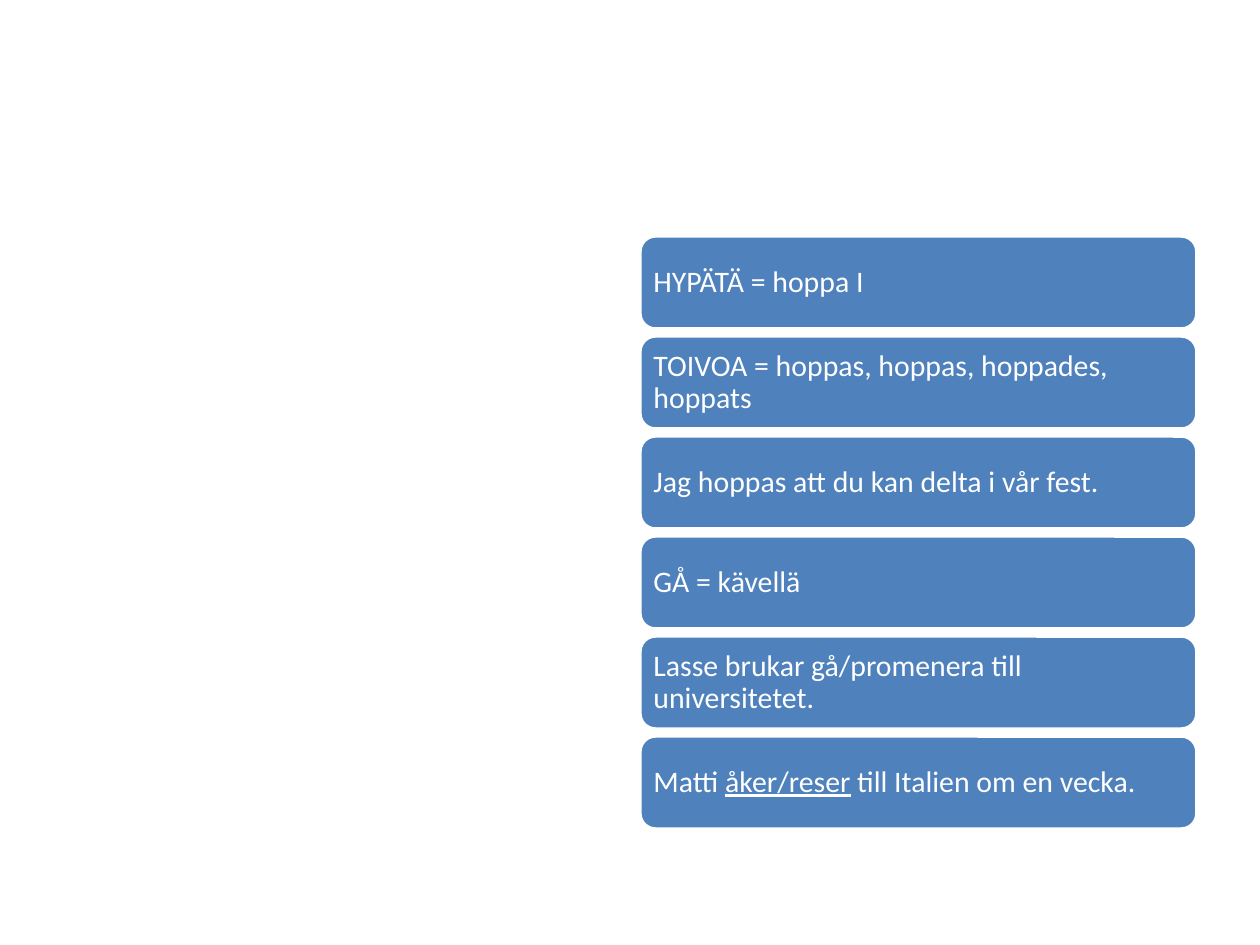
from pptx import Presentation
from pptx.dml.color import RGBColor
from pptx.enum.shapes import MSO_SHAPE
from pptx.enum.text import MSO_ANCHOR, PP_ALIGN
from pptx.util import Emu, Pt

ROUNDED = MSO_SHAPE.ROUNDED_RECTANGLE
MIDDLE = MSO_ANCHOR.MIDDLE
LEFT = PP_ALIGN.LEFT

EMU_PER_PX = 914400 // 126
COLORS = {"bar": "4F81BD", "white": "FFFFFF"}
FONT = "Calibri"

# Bar stack, in px
BAR_LEFT, BAR_TOP = 640, 236
BAR_WIDTH, BAR_HEIGHT = 557, 93
BAR_PITCH = 100
BAR_INSET = 9

# Each bar is a list of (text, underlined) runs
BARS = [
    [("HYPÄTÄ = hoppa I", False)],
    [("TOIVOA = hoppas, hoppas, hoppades, hoppats", False)],
    [("Jag hoppas att du kan delta i vår fest.", False)],
    [("GÅ = kävellä", False)],
    [("Lasse brukar gå/promenera till universitetet.", False)],
    [("Matti ", False), ("åker/reser", True), (" till Italien om en vecka.", False)],
]


def px(length):
    return Emu(length * EMU_PER_PX)


def color(name):
    return RGBColor.from_string(COLORS[name])


def add_runs(paragraph, runs):
    for text, underlined in runs:
        run = paragraph.add_run()
        run.text = text
        run.font.name = FONT
        run.font.size = Pt(17)
        run.font.color.rgb = color("white")
        if underlined:
            run.font.underline = True


def add_bar(slide, top, runs):
    shape = slide.shapes.add_shape(
        ROUNDED, px(BAR_LEFT), px(top), px(BAR_WIDTH), px(BAR_HEIGHT))
    shape.shadow.inherit = False
    shape.fill.solid()
    shape.fill.fore_color.rgb = color("bar")
    shape.line.color.rgb = color("white")
    shape.line.width = Pt(2)

    frame = shape.text_frame
    frame.word_wrap = True
    frame.vertical_anchor = MIDDLE
    frame.margin_left = frame.margin_right = px(BAR_INSET)
    frame.margin_top = frame.margin_bottom = px(BAR_INSET)
    paragraph = frame.paragraphs[0]
    paragraph.alignment = LEFT
    paragraph.line_spacing = 0.9
    add_runs(paragraph, runs)


def main():
    presentation = Presentation()
    presentation.slide_width = px(1260)
    presentation.slide_height = px(945)
    slide = presentation.slides.add_slide(presentation.slide_layouts[6])

    # Evenly spaced vocabulary bars
    for index, runs in enumerate(BARS):
        add_bar(slide, BAR_TOP + index * BAR_PITCH, runs)

    presentation.save("out.pptx")


if __name__ == "__main__":
    main()
